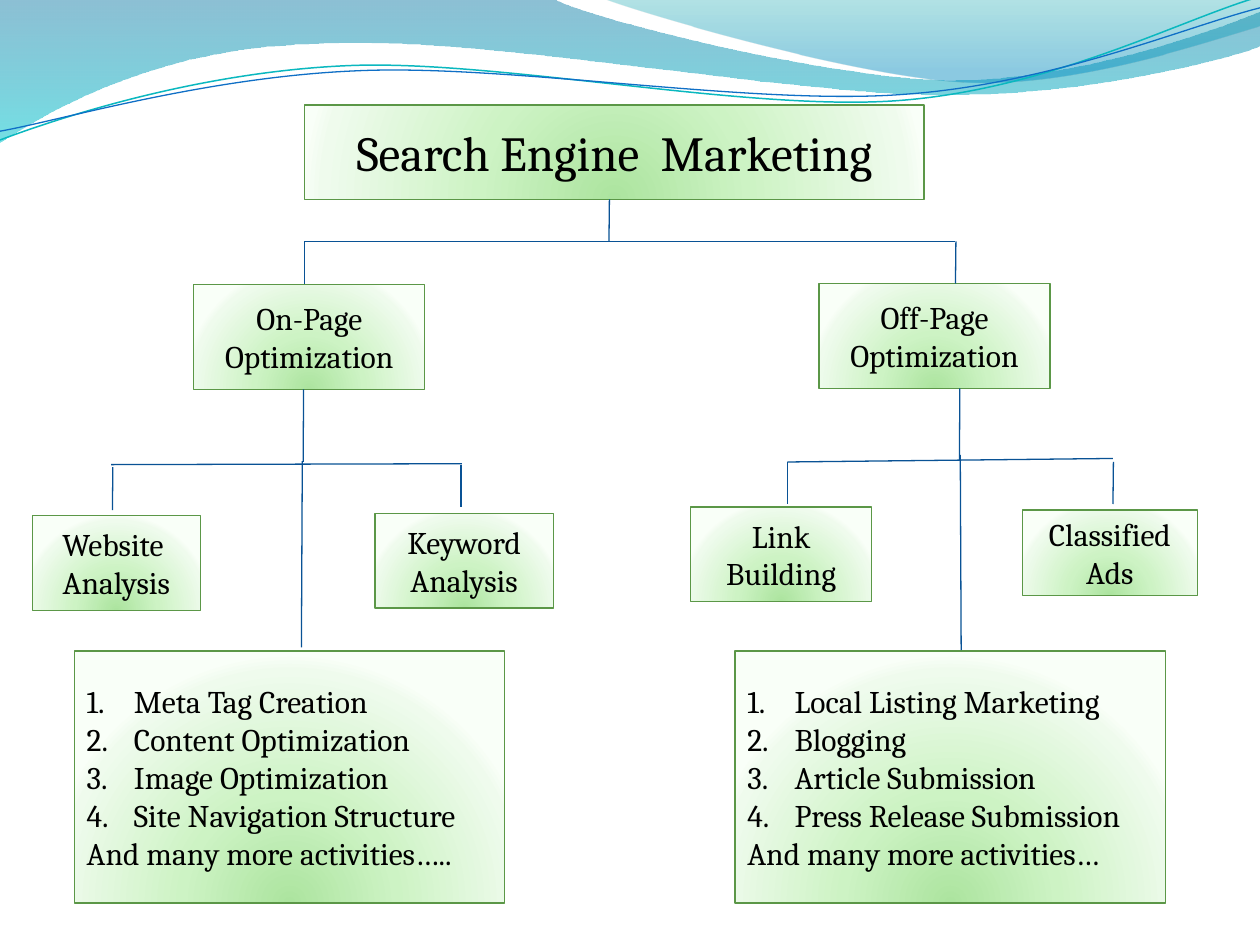
import math
from dataclasses import dataclass

from lxml import etree
from pptx import Presentation
from pptx import util as u
from pptx.dml.color import RGBColor
from pptx.enum import shapes, text
from pptx.oxml import parse_xml
from pptx.oxml.ns import nsdecls, qn

FONT = "Cambria"
BLACK, GREEN, NAVY = "000000", "5B9747", "095295"
BOX_STOPS = ((0, "ACE49F", 100), (43, "CDF3C4", 100), (93, "EFFBED", 100), (100, "F9FFF8", 100))
RADIAL = '<a:path path="circle"><a:fillToRect l="50000" t="130000" r="50000" b="-30000"/></a:path>'
DOWNWARD = '<a:lin ang="5400000" scaled="0"/>'
WAVE_CENTRE = (359.5, 42)
WAVE_TILT = 2.7


@dataclass(frozen=True)
class Box:
    left: float
    top: float
    width: float
    height: float
    lines: tuple[str, ...]
    size: int = 18
    numbered: int = 0


@dataclass(frozen=True)
class Line:
    x1: float
    y1: float
    x2: float
    y2: float


@dataclass(frozen=True)
class Wave:
    segments: tuple[tuple[float, ...], ...]
    stops: tuple = ()
    stroke: str = ""
    weight: float = 0


WAVES = (
    Wave(((0, 0), (317, -0.5), (342.5, 12, 478, 45.5, 546, 45.5), (614, 45.5, 690, 18.5, 720, 6.5),
          (720.5, 26), (708, 31.5, 626.5, 54.5, 537, 54), (448, 54, 275, 20, 185, 24.5),
          (93, 26, 33, 60, -0.5, 81.5), (0, 0)),
         stops=((0, "0074A1", 45), (100, "00C6CF", 55))),
    Wave(((345, -0.5), (366.5, 8, 491, 44.5, 553.5, 47), (616.5, 49.5, 692, 23, 720, 15),
          (720, 0), (345, -0.5)),
         stops=((0, "00A1A9", 30), (80, "008BBF", 45))),
    Wave(((0, 80), (34.5, 67, 114, 41, 199.5, 37.5), (284.5, 34, 427, 64, 513.5, 57.5),
          (600, 51, 675.5, 11, 718.5, -1.5)), stroke="0AB8BF", weight=0.85),
    Wave(((0, 75), (34, 69, 118, 44, 204, 40.5), (290, 36.5, 430, 60.5, 516, 54),
          (602, 48, 678, 15, 720, 4.5)), stroke="0F6FC6", weight=0.75),
)

BOXES = (
    Box(174, 60, 354, 54, ("Search Engine  Marketing",), size=28),
    Box(420, 372, 246, 144, ("Local Listing Marketing", "Blogging", "Article Submission",
                             "Press Release Submission", "And many more activities…"), numbered=4),
    Box(42.5, 372, 246, 144, ("Meta Tag Creation", "Content Optimization", "Image Optimization",
                              "Site Navigation Structure", "And many more activities….."), numbered=4),
    Box(214.25, 293.5, 102, 54, ("Keyword Analysis",)),
    Box(18.5, 294.75, 96, 54, ("Website  Analysis",)),
    Box(394.75, 289.75, 103.25, 54, ("Link Building",)),
    Box(584.25, 291.5, 100, 49, ("Classified Ads",)),
    Box(110.75, 162.5, 132, 60, ("On-Page Optimization",)),
    Box(468, 162, 132, 60, ("Off-Page Optimization",)),
)

LINES = (
    Line(174, 138, 546, 138),
    Line(63.5, 265.5, 264, 265),
    Line(450, 264, 636, 262),
    Line(174, 138, 174, 162),
    Line(546.25, 138, 546, 162),
    Line(348.25, 114, 348, 138),
    Line(263.5, 265.5, 263.5, 289.5),
    Line(64.5, 267, 64.25, 291.5),
    Line(173.5, 222.5, 173.25, 264),
    Line(548.5, 222, 548.25, 263),
    Line(450, 264, 450, 288),
    Line(636.25, 264, 636, 288),
    Line(172.75, 263.5, 172.25, 370),
    Line(548.75, 260, 549.25, 371.5),
)


def colour(value: str) -> RGBColor:
    return RGBColor.from_string(value)


def fill_gradient(shape, stops: tuple, direction: str) -> None:
    shape.fill.background()
    properties = shape._element.spPr
    entries = "".join(
        f'<a:gs pos="{position * 1000}"><a:srgbClr val="{colour(value)}">'
        f'<a:alpha val="{opacity * 1000}"/></a:srgbClr></a:gs>'
        for position, value, opacity in stops)
    gradient = parse_xml(f'<a:gradFill {nsdecls("a")} rotWithShape="1">'
                         f'<a:gsLst>{entries}</a:gsLst>{direction}</a:gradFill>')
    properties.replace(properties.find(qn("a:noFill")), gradient)


def set_stroke(shape, value: str, weight: float = 0.75) -> None:
    shape.line.color.rgb = colour(value)
    shape.line.width = u.Pt(weight)


def write(paragraph, content: str, *, size: float, align, indent: float = 0,
          numbered: bool = False) -> None:
    run = paragraph.add_run()
    run.text = content
    run.font.name = FONT
    run.font.size = u.Pt(size)
    run.font.color.rgb = colour(BLACK)
    paragraph.alignment = align
    if indent:
        properties = paragraph._p.get_or_add_pPr()
        properties.set("marL", str(u.Pt(indent)))
        properties.set("indent", str(-u.Pt(indent)))
        if numbered:
            properties.append(parse_xml(f'<a:buFont {nsdecls("a")} typeface="+mj-lt"/>'))
            properties.append(parse_xml(f'<a:buAutoNum {nsdecls("a")} type="arabicPeriod"/>'))


def rotate(point: tuple[float, float], degrees: float) -> tuple[float, float]:
    angle = math.radians(degrees)
    x, y = point[0] - WAVE_CENTRE[0], point[1] - WAVE_CENTRE[1]
    return (WAVE_CENTRE[0] + x * math.cos(angle) - y * math.sin(angle),
            WAVE_CENTRE[1] + x * math.sin(angle) + y * math.cos(angle))


def bend(shape, segments: tuple) -> None:
    straight = iter(list(shape._element.iter(qn("a:lnTo"))))
    for segment in segments[1:]:
        first, *others = [next(straight) for _ in range(len(segment) // 2)]
        if not others:
            continue
        curve = etree.Element(qn("a:cubicBezTo"))
        first.addprevious(curve)
        for step in (first, *others):
            curve.append(step[0])
            step.getparent().remove(step)


def draw_wave(slide, wave: Wave) -> None:
    points = [pair for segment in wave.segments for pair in zip(segment[::2], segment[1::2])]
    if wave.stroke:
        points = [rotate(point, WAVE_TILT) for point in points]
    start, *rest = [(u.Pt(x), u.Pt(y)) for x, y in points]
    builder = slide.shapes.build_freeform(*start)
    builder.add_line_segments(rest, close=not wave.stroke)
    shape = builder.convert_to_shape()
    bend(shape, wave.segments)
    shape.shadow.inherit = False
    if wave.stroke:
        shape.rotation = 360 - WAVE_TILT
        shape.fill.background()
        set_stroke(shape, wave.stroke, wave.weight)
    else:
        fill_gradient(shape, wave.stops, DOWNWARD)
        shape.line.fill.background()


def draw_box(slide, box: Box) -> None:
    shape = slide.shapes.add_shape(
        shapes.MSO_SHAPE.RECTANGLE, u.Pt(box.left), u.Pt(box.top), u.Pt(box.width), u.Pt(box.height))
    shape.shadow.inherit = False
    fill_gradient(shape, BOX_STOPS, RADIAL)
    set_stroke(shape, GREEN)
    frame = shape.text_frame
    frame.word_wrap = True
    frame.vertical_anchor = text.MSO_ANCHOR.MIDDLE
    align = text.PP_ALIGN.LEFT if box.numbered else text.PP_ALIGN.CENTER
    for index, content in enumerate(box.lines):
        paragraph = frame.add_paragraph() if index else frame.paragraphs[0]
        write(paragraph, content, size=box.size, align=align,
              indent=27 if box.numbered else 0, numbered=index < box.numbered)


def draw_line(slide, line: Line) -> None:
    connector = slide.shapes.add_connector(
        shapes.MSO_CONNECTOR.STRAIGHT, u.Pt(line.x1), u.Pt(line.y1), u.Pt(line.x2), u.Pt(line.y2))
    set_stroke(connector, NAVY)
    connector._element.spPr.append(parse_xml(f'<a:effectLst {nsdecls("a")}/>'))


def main() -> None:
    presentation = Presentation()
    presentation.slide_width, presentation.slide_height = u.Pt(720), u.Pt(540)
    slide = presentation.slides.add_slide(presentation.slide_layouts[6])
    for draw, items in ((draw_wave, WAVES), (draw_box, BOXES), (draw_line, LINES)):
        for item in items:
            draw(slide, item)
    presentation.save("out.pptx")


if __name__ == "__main__":
    main()
